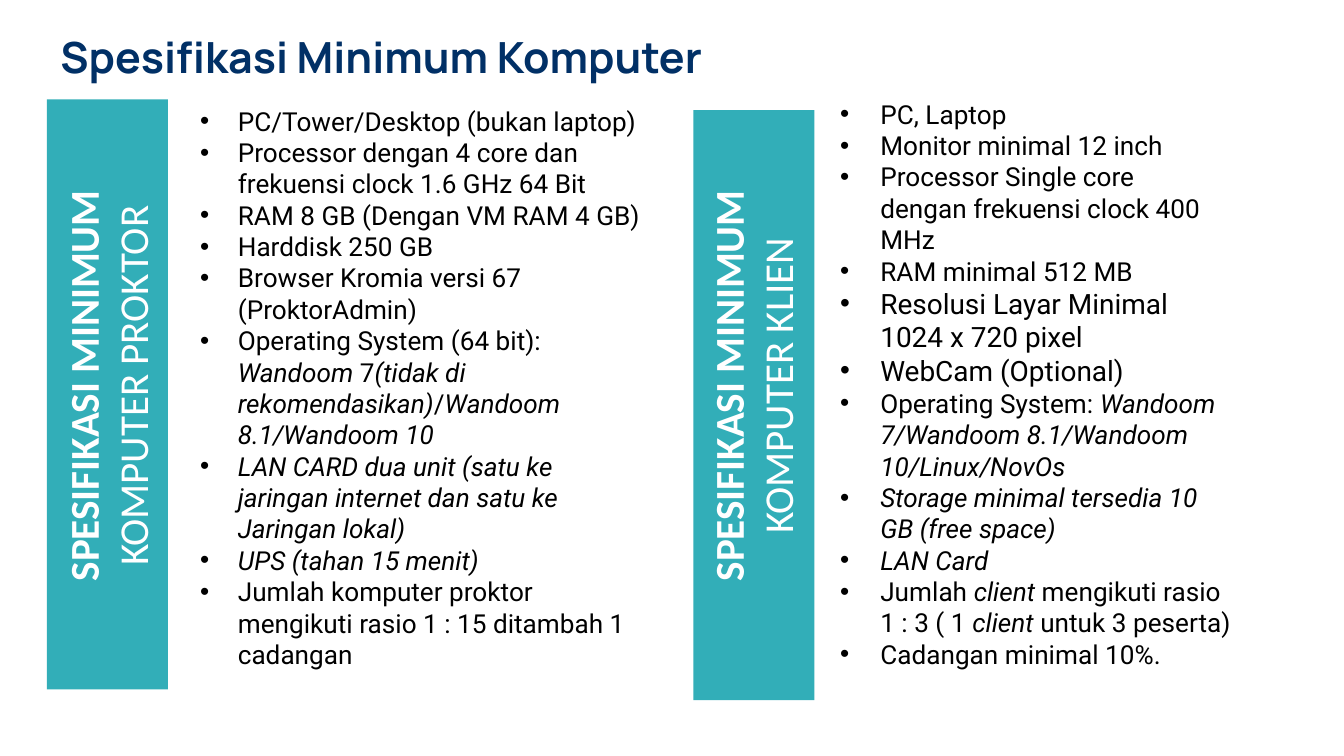
from lxml import etree
from pptx import Presentation
from pptx.dml.color import RGBColor
from pptx.enum.shapes import MSO_SHAPE
from pptx.enum.text import MSO_ANCHOR, MSO_AUTO_SIZE, PP_ALIGN
from pptx.oxml.ns import qn
from pptx.util import Inches, Pt

RECTANGLE = MSO_SHAPE.RECTANGLE
TOP = MSO_ANCHOR.TOP
NO_FIT = MSO_AUTO_SIZE.NONE
LEFT = PP_ALIGN.LEFT
CENTER = PP_ALIGN.CENTER

NAVY = RGBColor(0x01, 0x30, 0x66)
TEAL = RGBColor(0x32, 0xAE, 0xB8)
BLACK = RGBColor(0, 0, 0)
WHITE = RGBColor(0xFF, 0xFF, 0xFF)

PROCTOR_SPECS = [
    ("PC/Tower/Desktop (bukan laptop)", 14),
    ("Processor dengan 4 core dan frekuensi clock 1.6 GHz 64 Bit", 14),
    ("RAM 8 GB (Dengan VM RAM 4 GB)", 14),
    ("Harddisk 250 GB", 14),
    ("Browser Kromia versi 67 (ProktorAdmin)", 14),
    ("Operating System (64 bit): *Wandoom* 7*(tidak di rekomendasikan)*/*Wandoom 8.1/Wandoom 10*", 14),
    ("*LAN CARD dua unit (satu ke jaringan internet dan satu ke Jaringan lokal)*", 14),
    ("*UPS (tahan 15 menit)*", 14),
    ("Jumlah komputer proktor mengikuti rasio 1 : 15 ditambah 1 cadangan", 14),
]
CLIENT_SPECS = [
    ("PC, Laptop", 14),
    ("Monitor minimal 12 inch", 14),
    ("Processor Single core\ndengan frekuensi clock 400 MHz", 14),
    ("RAM minimal 512 MB", 14),
    ("Resolusi Layar Minimal 1024 x 720 pixel", 15),
    ("WebCam (Optional)", 15),
    ("Operating System: *Wandoom 7/Wandoom 8.1/Wandoom 10/Linux/NovOs*", 14),
    ("*Storage minimal tersedia 10 GB (free space)*", 14),
    ("*LAN Card*", 14),
    ("Jumlah *client* mengikuti rasio 1 : 3 ( 1 *client* untuk 3 peserta)", 14),
    ("Cadangan minimal 10%.", 14),
]


def write_text(paragraph, text, *, size, font, color, bold=False, italic=False, align=LEFT):
    paragraph.alignment = align
    for index, line in enumerate(text.split("\n")):
        if index:
            paragraph.add_line_break()
        run = paragraph.add_run()
        run.text = line
        run.font.size = Pt(size)
        run.font.name = font
        run.font.color.rgb = color
        run.font.bold = bold
        run.font.italic = italic


def set_frame(frame, horizontal, vertical):
    frame.word_wrap = True
    frame.auto_size = NO_FIT
    frame.vertical_anchor = TOP
    frame.margin_left = frame.margin_right = Inches(horizontal)
    frame.margin_top = frame.margin_bottom = Inches(vertical)


def add_bullet(paragraph, margin, hanging):
    properties = paragraph._p.get_or_add_pPr()
    properties.set("marL", str(Inches(margin)))
    properties.set("indent", str(-Inches(hanging)))
    bullet_color = etree.SubElement(properties, qn("a:buClr"))
    etree.SubElement(bullet_color, qn("a:srgbClr"), val=str(BLACK))
    etree.SubElement(properties, qn("a:buFont"), typeface="Arial")
    etree.SubElement(properties, qn("a:buChar"), char="•")


def add_title(slide, text):
    title = slide.shapes.title
    title.left, title.top = Inches(0.35), Inches(0.22)
    title.width, title.height = Inches(9.55), Inches(0.64)
    set_frame(title.text_frame, 0.1, 0.05)
    heading = title.text_frame.paragraphs[0]
    heading.line_spacing = 0.9
    write_text(heading, text, size=23, font="Manrope", color=NAVY, bold=True)


def add_band(slide, left, top):
    band = slide.shapes.add_shape(RECTANGLE, Inches(left), Inches(top), Inches(0.9), Inches(4.39))
    band.shadow.inherit = False
    band.fill.solid()
    band.fill.fore_color.rgb = TEAL
    band.line.fill.background()


def add_band_label(slide, left, computer):
    label = slide.shapes.add_textbox(Inches(left), Inches(2.5), Inches(3.24), Inches(0.74))
    label.rotation = 270
    set_frame(label.text_frame, 0, 0)
    paragraph = label.text_frame.paragraphs[0]
    style = dict(size=22, font="Calibri", color=WHITE, align=CENTER)
    write_text(paragraph, "SPESIFIKASI MINIMUM", bold=True, **style)
    write_text(paragraph, f" {computer}", **style)


def add_spec_list(slide, specs, left, top, width, height, margin, hanging):
    box = slide.shapes.add_textbox(Inches(left), Inches(top), Inches(width), Inches(height))
    frame = box.text_frame
    set_frame(frame, 0.07, 0.04)
    for index, (spec, size) in enumerate(specs):
        paragraph = frame.add_paragraph() if index else frame.paragraphs[0]
        add_bullet(paragraph, margin, hanging)
        for part, text in enumerate(spec.split("*")):
            if text:
                write_text(paragraph, text, size=size, font="Roboto", color=BLACK, italic=part % 2 == 1)


def main():
    deck = Presentation()
    deck.slide_width = Inches(10)
    deck.slide_height = Inches(10 * 9 / 16)
    slide = deck.slides.add_slide(deck.slide_layouts[5])
    add_title(slide, "Spesifikasi Minimum Komputer")
    add_band(slide, 0.35, 0.74)
    add_spec_list(slide, PROCTOR_SPECS, 1.42, 0.74, 3.47, 4.55, margin=0.28, hanging=0.28)
    add_band(slide, 5.16, 0.82)
    add_spec_list(slide, CLIENT_SPECS, 5.89, 0.69, 3.37, 4.6, margin=0.59, hanging=0.3)
    add_band_label(slide, -0.82, "KOMPUTER PROKTOR")
    add_band_label(slide, 3.98, "KOMPUTER KLIEN")
    deck.save("out.pptx")


if __name__ == "__main__":
    main()
